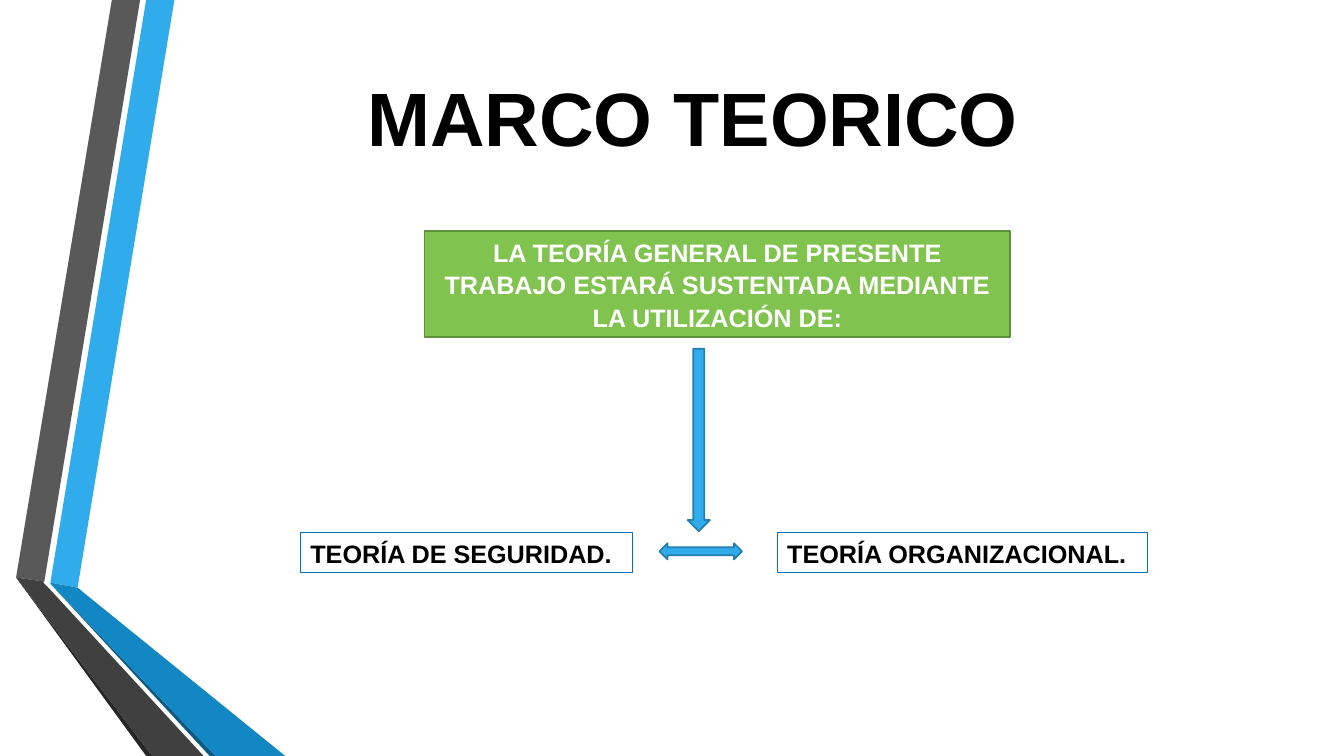
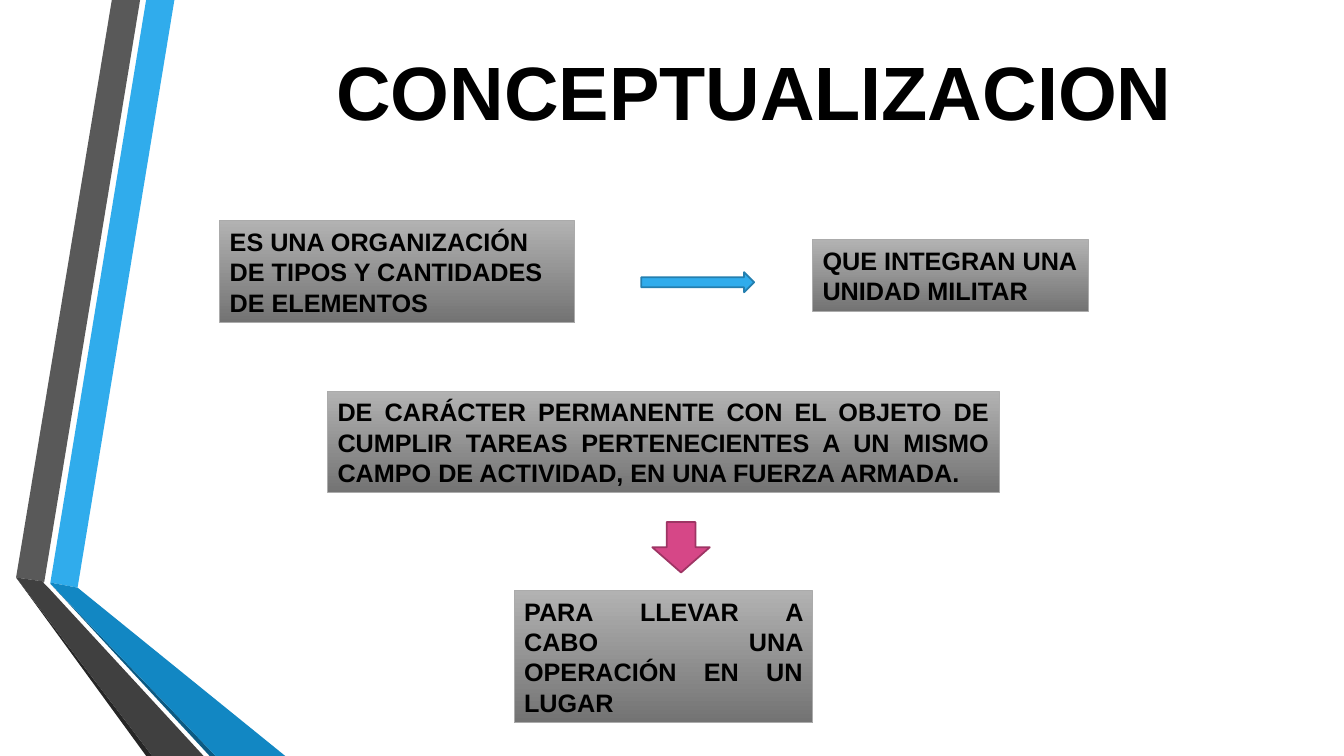
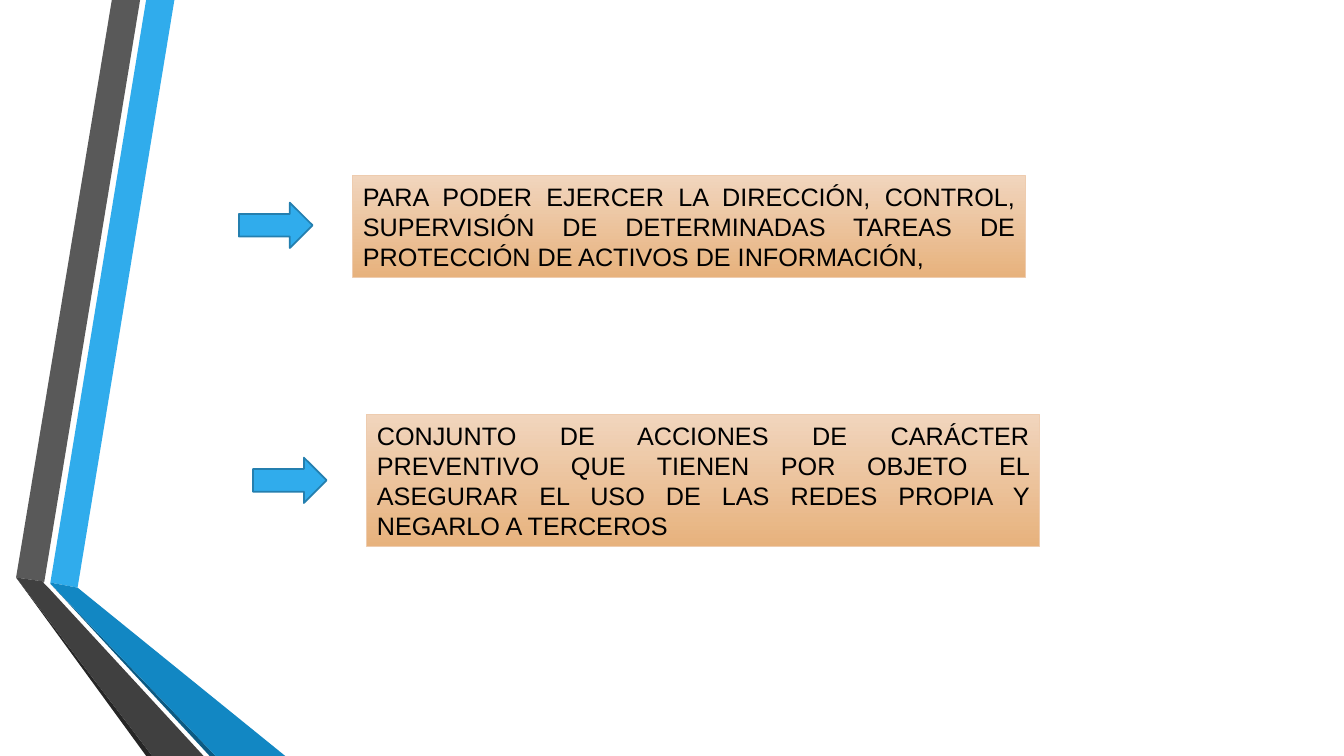
from pptx import Presentation, util as u
from pptx.dml.color import RGBColor
from pptx.enum import shapes, text

KIND = shapes.MSO_SHAPE
LEFT, MID, JUST = text.PP_ALIGN.LEFT, text.PP_ALIGN.CENTER, text.PP_ALIGN.JUSTIFY

# Shared ribbon: colour and corner points in inches
RIBBON = [
    ("30ACEC", [(0.5, 5.78), (0.77, 5.83), (1.73, 0), (1.45, 0)]),
    ("595959", [(1.39, 0), (1.11, 0), (0.16, 5.73), (0.44, 5.77)]),
    ("262626", [(0.16, 5.73), (1.45, 7.5), (1.51, 7.5)]),
    ("0C5A82", [(0.5, 5.79), (2.08, 7.5), (2.14, 7.5)]),
    ("1287C3", [(0.5, 5.79), (2.14, 7.5), (2.83, 7.5), (0.77, 5.83), (0.5, 5.78)]),
    ("404040", [(2.02, 7.5), (0.48, 5.83), (0.43, 5.78), (0.44, 5.77),
                (0.16, 5.73), (1.51, 7.5)]),
]

# Looks: fill (none, one colour, or top and bottom of a gradient), line, width
GREEN = (["80C34F"], "5F903A", 1.25)
FRAME = ([], "0070C0", 0.75)
GREY = (["B2B2B2", "737373"], "ABABAB", 0.75)
SAND = (["F1D5BD", "E7B27D"], "EECCAF", 0.75)
BLUE = (["30ACEC"], "247FAF", 1.25)
PINK = (["D64787"], "9E3564", 1.25)

# Text formats
HEAD = dict(bold=True, align=MID, gap=1.07, color="FFFFFF")
TERM = dict(bold=True, align=JUST, gap=1.07)
BOLD = dict(bold=True)
FULL = dict(bold=True, align=JUST)
BODY = dict(align=JUST)

# Slides: title with its place, boxes, arrows
SLIDES = [
    dict(
        title=("MARCO TEORICO", (3.2, 0.65, 7.34, 1.01)),
        boxes=[
            ("LA TEORÍA GENERAL DE PRESENTE TRABAJO ESTARÁ SUSTENTADA MEDIANTE "
             "LA UTILIZACIÓN DE:", (4.21, 2.29, 5.81, 1.05), GREEN, HEAD),
            ("TEORÍA DE SEGURIDAD.", (2.98, 5.28, 3.29, 0.4), FRAME, TERM),
            ("TEORÍA ORGANIZACIONAL.", (7.71, 5.28, 3.67, 0.4), FRAME, TERM),
        ],
        arrows=[
            (KIND.DOWN_ARROW, (6.82, 3.46, 0.22, 1.81), BLUE),
            (KIND.LEFT_RIGHT_ARROW, (6.54, 5.39, 0.82, 0.16), BLUE),
        ],
    ),
    dict(
        title=("CONCEPTUALIZACION", (3.1, 0.39, 8.76, 1.01)),
        boxes=[
            ("ES UNA ORGANIZACIÓN DE TIPOS Y CANTIDADES DE ELEMENTOS",
             (2.18, 2.19, 3.52, 1.01), GREY, BOLD),
            ("QUE INTEGRAN UNA UNIDAD MILITAR",
             (8.06, 2.38, 2.74, 0.71), GREY, BOLD),
            ("DE CARÁCTER PERMANENTE CON EL OBJETO DE CUMPLIR TAREAS "
             "PERTENECIENTES A UN MISMO CAMPO DE ACTIVIDAD, EN UNA FUERZA ARMADA.",
             (3.25, 3.88, 6.66, 1.01), GREY, FULL),
            ("PARA LLEVAR A CABO UNA OPERACIÓN EN UN LUGAR",
             (5.1, 5.86, 2.96, 1.31), GREY, FULL),
        ],
        arrows=[
            (KIND.RIGHT_ARROW, (6.36, 2.7, 1.12, 0.2), BLUE),
            (KIND.DOWN_ARROW, (6.47, 5.18, 0.57, 0.5), PINK),
        ],
    ),
    dict(
        boxes=[
            ("PARA PODER EJERCER LA DIRECCIÓN, CONTROL, SUPERVISIÓN DE "
             "DETERMINADAS TAREAS DE PROTECCIÓN DE ACTIVOS DE INFORMACIÓN,",
             (3.5, 1.74, 6.67, 1.01), SAND, BODY),
            ("CONJUNTO DE ACCIONES DE CARÁCTER PREVENTIVO QUE TIENEN POR OBJETO "
             "EL ASEGURAR EL USO DE LAS REDES PROPIA Y NEGARLO A TERCEROS",
             (3.64, 4.11, 6.67, 1.31), SAND, BODY),
        ],
        arrows=[
            (KIND.RIGHT_ARROW, (2.37, 2.01, 0.73, 0.45), BLUE),
            (KIND.RIGHT_ARROW, (2.51, 4.54, 0.73, 0.45), BLUE),
        ],
    ),
]


def rgb(code):
    return RGBColor.from_string(code)


def inches(nums):
    return [u.Inches(n) for n in nums]


def write(shape, words, size=18, bold=False, color="000000", align=LEFT, gap=1.0):
    frame = shape.text_frame
    frame.word_wrap = True
    frame.vertical_anchor = text.MSO_ANCHOR.MIDDLE
    par = frame.paragraphs[0]
    par.alignment, par.line_spacing = align, gap
    run = par.add_run()
    run.text = words
    font = run.font
    font.name, font.size, font.bold = "Arial", u.Pt(size), bold
    font.color.rgb = rgb(color)


def paint(shape, fills, line=None, width=0):
    shape.shadow.inherit = False
    if not fills:
        shape.fill.background()
    elif len(fills) == 1:
        shape.fill.solid()
        shape.fill.fore_color.rgb = rgb(fills[0])
    else:
        shape.fill.gradient()
        shape.fill.gradient_angle = 270
        for stop, code in zip(shape.fill.gradient_stops, fills):
            stop.color.rgb = rgb(code)
    if line:
        shape.line.color.rgb = rgb(line)
        shape.line.width = u.Pt(width)
    else:
        shape.line.fill.background()


def block(slide, kind, place, look):
    shape = slide.shapes.add_shape(kind, *inches(place))
    paint(shape, *look)
    return shape


def brand(layout, slide):
    """Build the ribbon on a slide and move it to the layout all slides share."""
    for holder in list(layout.placeholders):
        layout.shapes.element.remove(holder.element)
    for color, points in RIBBON:
        first, *rest = [inches(p) for p in points]
        pen = slide.shapes.build_freeform(*first)
        pen.add_line_segments(rest, close=True)
        shape = pen.convert_to_shape()
        paint(shape, [color])
        layout.shapes.element.append(shape.element)


def main():
    deck = Presentation()
    deck.slide_width, deck.slide_height = inches((13.33, 7.5))
    blank = deck.slide_layouts[6]
    for num, data in enumerate(SLIDES):
        slide = deck.slides.add_slide(blank)
        if num == 0:
            brand(blank, slide)
        for words, place, look, style in data["boxes"]:
            write(block(slide, KIND.RECTANGLE, place, look), words, **style)
        for kind, place, look in data["arrows"]:
            block(slide, kind, place, look)
        if "title" in data:
            words, place = data["title"]
            box = slide.shapes.add_textbox(*inches(place))
            write(box, words, size=54, bold=True, align=MID)
    deck.save("out.pptx")


if __name__ == "__main__":
    main()
